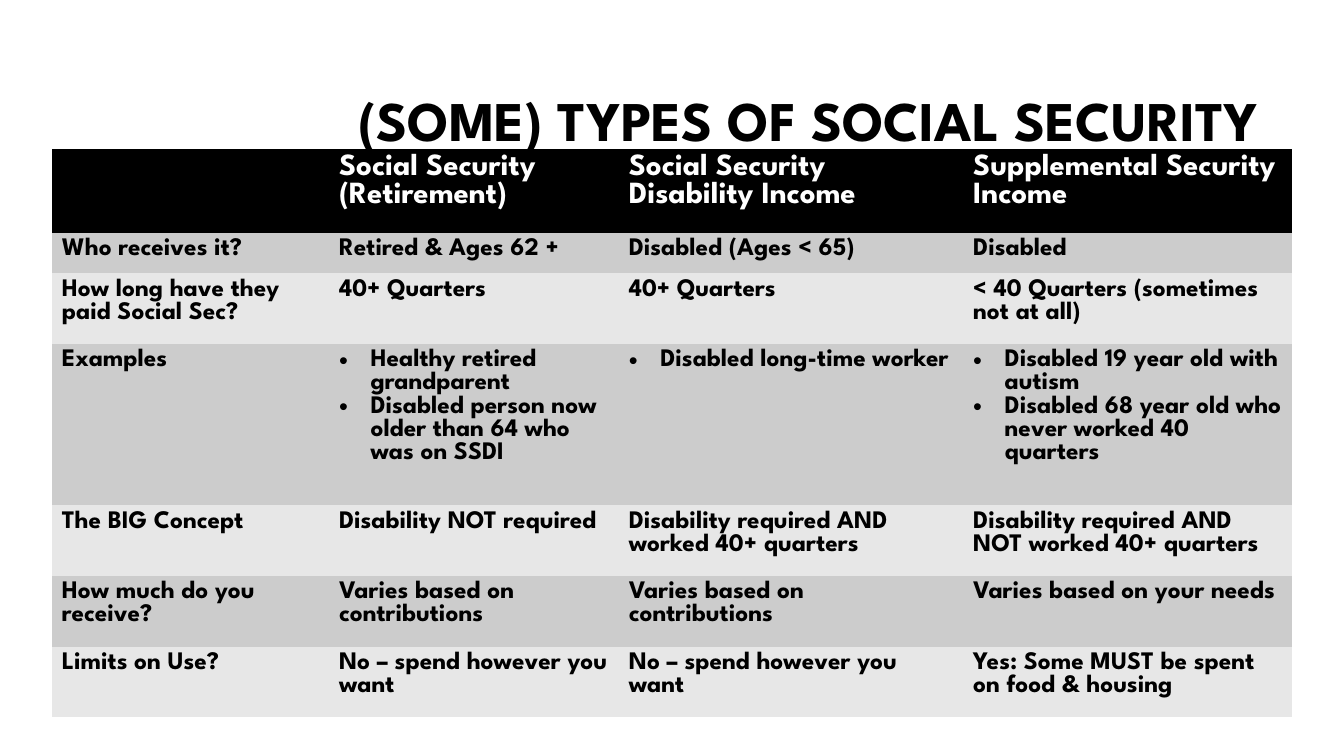
"""Build a slide with a table comparing types of Social Security."""
from lxml.etree import SubElement
from pptx import Presentation
from pptx.dml.color import RGBColor
from pptx.enum.text import MSO_ANCHOR, PP_ALIGN
from pptx.oxml.ns import qn
from pptx.util import Pt

FONT = "League Spartan"
COLORS = {"black": "000000", "white": "FFFFFF", "dark band": "CCCCCC", "light band": "E7E7E7"}
PLAIN_TABLE_STYLE = "{2D5ABB26-0587-4C30-8999-92F81FD0307C}"
COLUMN_WIDTHS = [198, 207, 246, 235]
ROW_HEIGHTS = [58.4, 28, 49, 111.8, 49, 49, 38]
BULLET_INDENT = Pt(22.5)
ROWS = [
    ["", "Social Security (Retirement)", "Social Security Disability Income",
     "Supplemental Security Income"],
    ["Who receives it?", "Retired & Ages 62 +", "Disabled (Ages < 65)", "Disabled"],
    ["How long have they paid Social Sec?", "40+ Quarters", "40+ Quarters",
     "< 40 Quarters (sometimes not at all)"],
    ["Examples",
     ["Healthy retired grandparent", "Disabled person now older than 64 who was on SSDI"],
     ["Disabled long-time worker"],
     ["Disabled 19 year old with autism", "Disabled 68 year old who never worked 40 quarters"]],
    ["The BIG Concept", "Disability NOT required", "Disability required AND worked 40+ quarters",
     "Disability required AND NOT worked 40+ quarters"],
    ["How much do you receive?", "Varies based on contributions",
     "Varies based on contributions", "Varies based on your needs"],
    ["Limits on Use?", "No – spend however you want", "No – spend however you want",
     "Yes: Some MUST be spent on food & housing"],
]


def add_run(paragraph, text, size, color):
    """Append a bold run to a paragraph."""
    run = paragraph.add_run()
    run.text = text
    run.font.name = FONT
    run.font.size = Pt(size)
    run.font.bold = True
    run.font.color.rgb = RGBColor.from_string(COLORS[color])


def add_bullet(paragraph):
    """Give a paragraph a round bullet with a hanging indent."""
    properties = paragraph._p.get_or_add_pPr()
    properties.set("marL", str(BULLET_INDENT))
    properties.set("indent", str(-BULLET_INDENT))
    SubElement(properties, qn("a:buFont"), typeface="Arial")
    SubElement(properties, qn("a:buChar"), char="•")


def add_title(slide, text):
    """Add the right-aligned slide title."""
    frame = slide.shapes.add_textbox(Pt(205), Pt(25), Pt(701), Pt(126)).text_frame
    frame.word_wrap = True
    frame.vertical_anchor = MSO_ANCHOR.MIDDLE
    paragraph = frame.paragraphs[0]
    paragraph.alignment = PP_ALIGN.RIGHT
    paragraph.line_spacing = 0.9
    add_run(paragraph, text, 40, "black")


def fill_cell(cell, content, fill, size, color):
    """Fill a cell with plain text, or with bullets when given a list."""
    cell.fill.solid()
    cell.fill.fore_color.rgb = RGBColor.from_string(COLORS[fill])
    bulleted = isinstance(content, list)
    for index, text in enumerate(content if bulleted else [content]):
        frame = cell.text_frame
        paragraph = frame.add_paragraph() if index else frame.paragraphs[0]
        if bulleted:
            add_bullet(paragraph)
        if text:
            add_run(paragraph, text, size, color)


def add_comparison_table(slide):
    """Add the table with a black header and alternating grey bands."""
    frame = slide.shapes.add_table(len(ROWS), len(COLUMN_WIDTHS), Pt(37), Pt(106.5),
                                   Pt(sum(COLUMN_WIDTHS)), Pt(sum(ROW_HEIGHTS)))
    table = frame.table
    table._tbl.tblPr.find(qn("a:tableStyleId")).text = PLAIN_TABLE_STYLE
    for column, width in zip(table.columns, COLUMN_WIDTHS):
        column.width = Pt(width)
    for index, (row, height, contents) in enumerate(zip(table.rows, ROW_HEIGHTS, ROWS)):
        row.height = Pt(height)
        band = "dark band" if index % 2 else "light band"
        style = (band, 18, "black") if index else ("black", 22, "white")
        for cell, content in zip(row.cells, contents):
            fill_cell(cell, content, *style)


def main():
    """Create and save the presentation."""
    presentation = Presentation()
    presentation.slide_width = Pt(960)
    presentation.slide_height = Pt(540)
    slide = presentation.slides.add_slide(presentation.slide_layouts[6])
    add_title(slide, "(SOME) TYPES OF SOCIAL SECURITY")
    add_comparison_table(slide)
    presentation.save("out.pptx")


if __name__ == "__main__":
    main()
